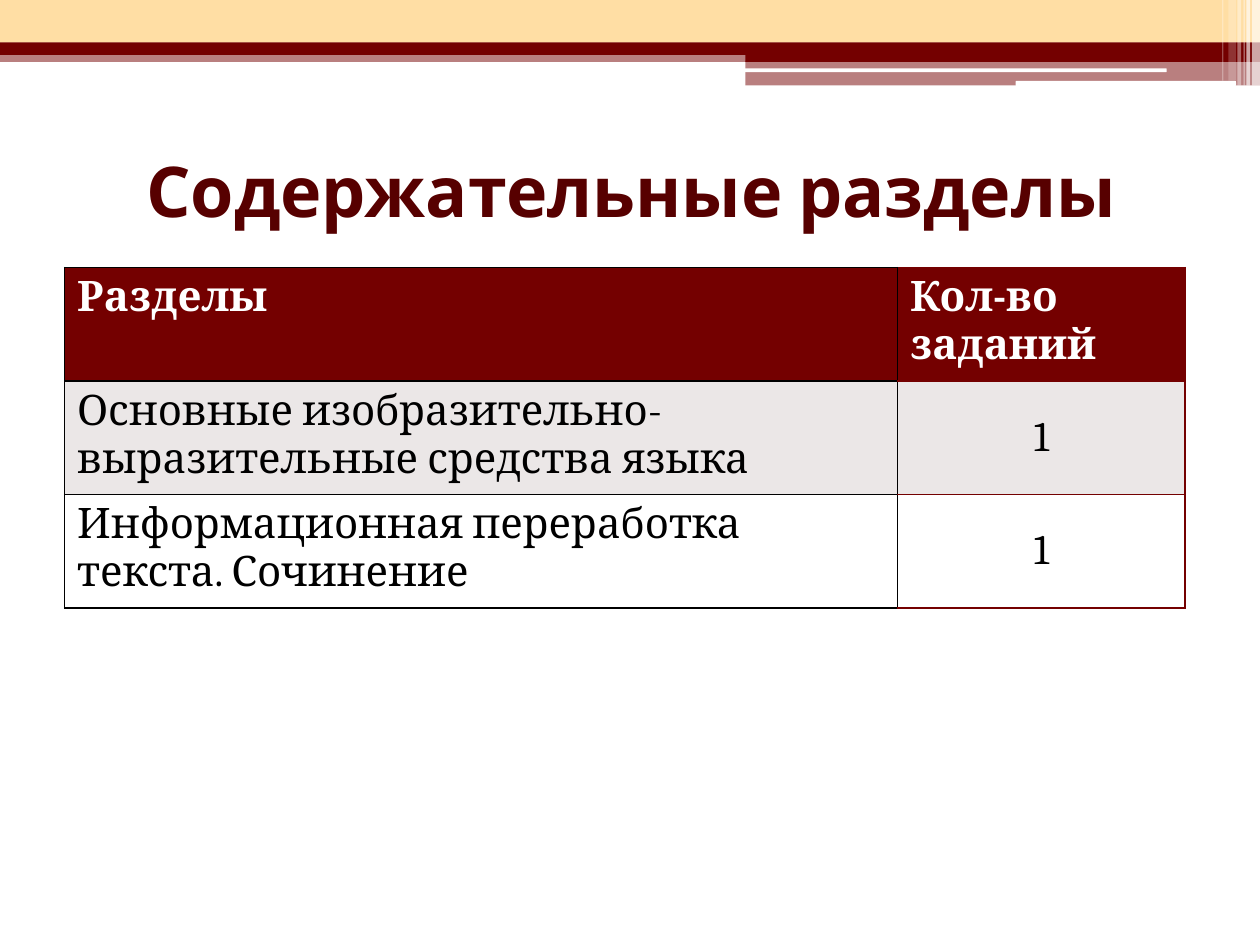
from typing import NamedTuple

import lxml.etree
import pptx
import pptx.dml.color
import pptx.enum.shapes
import pptx.enum.text
import pptx.oxml.ns
import pptx.util

Pt = pptx.util.Pt
RGBColor = pptx.dml.color.RGBColor
Shapes = pptx.enum.shapes.MSO_SHAPE
Align = pptx.enum.text.PP_ALIGN
Anchor = pptx.enum.text.MSO_ANCHOR
qn = pptx.oxml.ns.qn

MAROON = RGBColor(0x74, 0x00, 0x00)
DARK_MAROON = RGBColor(0x57, 0x00, 0x00)
CREAM = RGBColor(0xFF, 0xDE, 0xA4)
PALE_GRAY = RGBColor(0xEB, 0xE7, 0xE7)
WHITE = RGBColor(0xFF, 0xFF, 0xFF)
BLACK = RGBColor(0x00, 0x00, 0x00)


class Band(NamedTuple):
    left: float
    top: float
    width: float
    height: float
    color: RGBColor
    opacity: int = 100
    rounded: bool = False


class Row(NamedTuple):
    section: str
    count: str
    fill: RGBColor
    header: bool = False


BANDS = [
    Band(0, 28.8, 720, 6.6, MAROON, 50),
    Band(0, 0, 720, 24.4, CREAM),
    Band(0, 24.2, 720, 7.2, MAROON),
    Band(426, 28.2, 294, 7.2, MAROON),
    Band(426, 34.6, 294, 14.2, MAROON, 50),
    Band(425.5, 39.1, 241.2, 2.16, WHITE, rounded=True),
    Band(580.3, 46.3, 126, 2.9, WHITE, rounded=True),
    Band(715.4, 0, 4.6, 48.9, WHITE, 65),
    Band(712.2, 0, 2.16, 48.9, WHITE, 65),
    Band(710.6, 0, 0.72, 48.9, WHITE, 60),
    Band(707.1, 0, 2.16, 48.9, WHITE, 40),
    Band(702, 0, 4.3, 46.1, WHITE, 20),
    Band(698.4, 0, 0.72, 46.1, WHITE, 30),
]

ROWS = [
    Row("Разделы", "Кол-во\nзаданий", MAROON, header=True),
    Row("Основные изобразительно-выразительные средства языка", "1", PALE_GRAY),
    Row("Информационная переработка текста. Сочинение", "1", WHITE),
]

COLUMN_WIDTHS = (476, 164.4)
ROW_HEIGHT = 62


def draw_band(slide: pptx.slide.Slide, band: Band) -> None:
    preset = Shapes.ROUNDED_RECTANGLE if band.rounded else Shapes.RECTANGLE
    shape = slide.shapes.add_shape(
        preset, Pt(band.left), Pt(band.top), Pt(band.width), Pt(band.height)
    )
    shape.shadow.inherit = False
    shape.line.fill.background()
    shape.fill.solid()
    shape.fill.fore_color.rgb = band.color
    if band.opacity < 100:
        color = shape.fill._xPr.find(".//" + qn("a:srgbClr"))
        lxml.etree.SubElement(color, qn("a:alpha"), val=str(band.opacity * 1000))


def draw_title(slide: pptx.slide.Slide, text: str) -> None:
    box = slide.shapes.add_textbox(Pt(36.7), Pt(66.2), Pt(648), Pt(84.2))
    frame = box.text_frame
    frame.word_wrap = True
    frame.vertical_anchor = Anchor.MIDDLE
    frame.text = text
    paragraph = frame.paragraphs[0]
    paragraph.alignment = Align.CENTER
    paragraph.font.name = "Cabin"
    paragraph.font.size = Pt(40)
    paragraph.font.bold = True
    paragraph.font.color.rgb = DARK_MAROON


def set_borders(cell: pptx.table._Cell, left: RGBColor, others: RGBColor) -> None:
    properties = cell._tc.get_or_add_tcPr()
    for side in "LRTB":
        line = lxml.etree.SubElement(properties, qn(f"a:ln{side}"), w=str(Pt(1)))
        fill = lxml.etree.SubElement(line, qn("a:solidFill"))
        color = left if side == "L" else others
        lxml.etree.SubElement(fill, qn("a:srgbClr"), val=str(color))


def fill_cell(cell: pptx.table._Cell, text: str, row: Row, centered: bool) -> None:
    cell.fill.solid()
    cell.fill.fore_color.rgb = row.fill
    cell.vertical_anchor = Anchor.MIDDLE if centered else Anchor.TOP
    cell.text_frame.text = text
    for paragraph in cell.text_frame.paragraphs:
        paragraph.alignment = Align.CENTER if centered else Align.LEFT
        paragraph.font.name = "Cambria"
        paragraph.font.size = Pt(24)
        paragraph.font.bold = row.header
        paragraph.font.color.rgb = WHITE if row.header else BLACK


def draw_table(slide: pptx.slide.Slide, rows: list[Row]) -> None:
    table = slide.shapes.add_table(
        len(rows), len(COLUMN_WIDTHS), Pt(36.9), Pt(152.9),
        Pt(sum(COLUMN_WIDTHS)), Pt(ROW_HEIGHT * len(rows)),
    ).table
    for column, width in zip(table.columns, COLUMN_WIDTHS):
        column.width = Pt(width)
    for index, row in enumerate(rows):
        section, count = table.cell(index, 0), table.cell(index, 1)
        set_borders(section, BLACK, BLACK)
        set_borders(count, BLACK, MAROON)
        fill_cell(section, row.section, row, centered=False)
        fill_cell(count, row.count, row, centered=not row.header)


def main() -> None:
    presentation = pptx.Presentation()
    presentation.slide_width = Pt(720)
    presentation.slide_height = Pt(540)
    slide = presentation.slides.add_slide(presentation.slide_layouts[6])
    for band in BANDS:
        draw_band(slide, band)
    draw_title(slide, "Содержательные разделы")
    draw_table(slide, ROWS)
    presentation.save("out.pptx")


if __name__ == "__main__":
    main()
